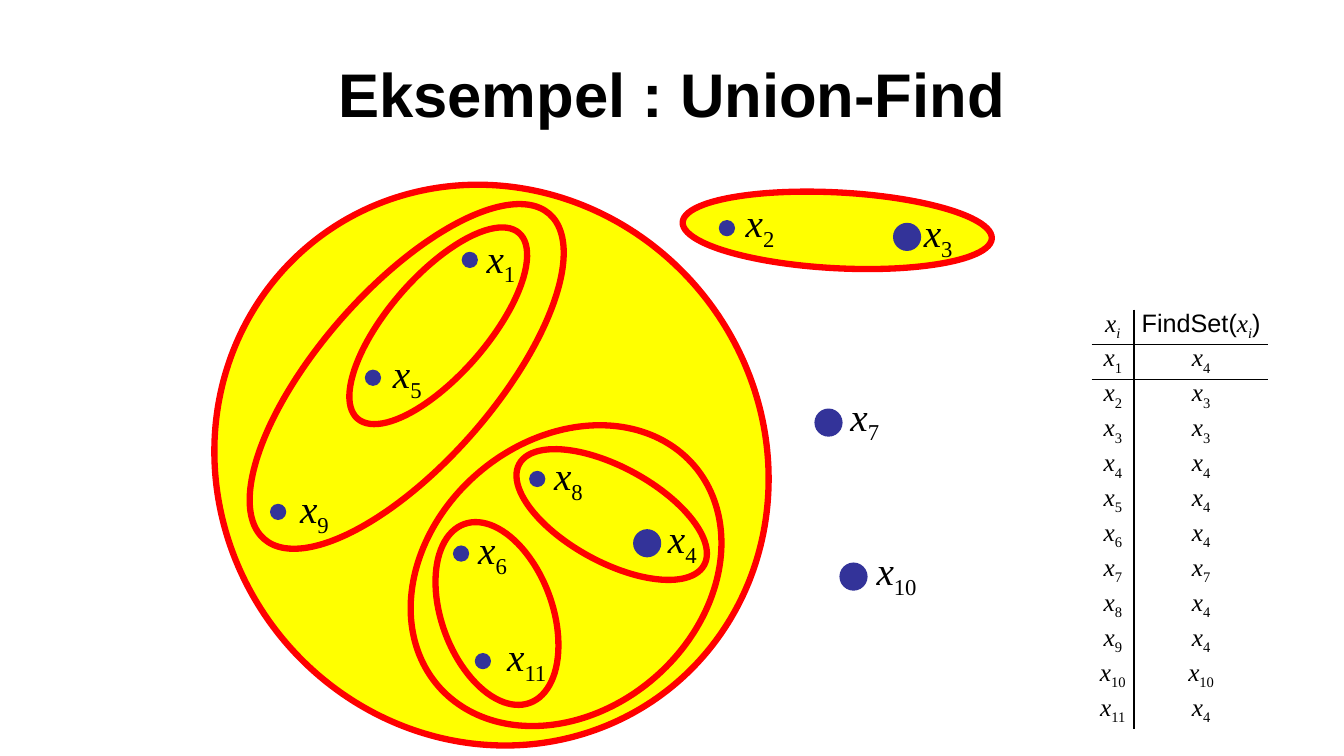
from lxml import etree
from pptx import Presentation
from pptx.dml.color import RGBColor as RGB
from pptx.enum.shapes import MSO_SHAPE as Shape
from pptx.enum.text import MSO_ANCHOR as Anchor, PP_ALIGN as Align
from pptx.oxml.ns import qn
from pptx.util import Cm, Pt


class Theme:
    text = RGB(0x00, 0x00, 0x00)
    set_fill = RGB(0xFF, 0xFF, 0x00)
    set_line = RGB(0xFF, 0x00, 0x00)
    dot = RGB(0x33, 0x33, 0x99)
    sans = "Arial"
    serif = "Times New Roman"
    title_size = Pt(44)
    label_size = Pt(28)
    table_size = Pt(18)
    set_width = Pt(4.5)
    border_width = Pt(1)


NO_TABLE_STYLE = "{2D5ABB26-0587-4C30-8999-92F81FD0307C}"

# left, top, width, height, rotation; outer sets come before inner ones
SETS = [
    (5.54, 4.52, 13.69, 14.4, 141.6),
    (4.8, 7.29, 10.9, 4.39, 311.3),
    (10.01, 11.1, 8.51, 6.81, 139.3),
    (9.8, 5.11, 2.49, 6.2, 41),
    (14.22, 10.31, 2.39, 5.31, 118.6),
    (11.13, 13.06, 2.79, 4.8, 339.8),
    (17.2, 4.85, 7.8, 1.91, 3),
]

# index: representative, dot centre x and y, label left and top
ELEMENTS = {
    1: (4, 11.84, 6.55, 11.89, 5.77),
    2: (3, 18.32, 5.75, 18.42, 4.88),
    3: (3, 22.86, 5.97, 22.91, 5.13),
    4: (4, 16.31, 13.69, 16.46, 12.83),
    5: (4, 9.4, 9.52, 9.53, 8.69),
    6: (4, 11.62, 13.95, 11.68, 13.11),
    7: (7, 20.88, 10.65, 21.06, 9.75),
    8: (4, 13.54, 12.07, 13.59, 11.25),
    9: (4, 7.01, 12.9, 7.19, 12.09),
    10: (10, 21.51, 14.53, 21.64, 13.64),
    11: (4, 12.17, 16.66, 12.32, 15.82),
}


def add_variable(p, index, size):
    """Append an italic x with a subscript index to paragraph p."""
    for text in ("x", index):
        r = p.add_run()
        r.text = text
        r.font.name = Theme.serif
        r.font.size = size
        r.font.color.rgb = Theme.text
        r.font.italic = not text.isdigit()
    r._r.get_or_add_rPr().set("baseline", "-25000")


def add_ellipse(left, top, width, height, color):
    sp = s.shapes.add_shape(Shape.OVAL, Cm(left), Cm(top), Cm(width), Cm(height))
    sp.shadow.inherit = False
    sp.fill.solid()
    sp.fill.fore_color.rgb = color
    sp.line.fill.background()
    return sp


prs = Presentation()
prs.slide_width, prs.slide_height = Cm(33.87), Cm(19.05)
s = prs.slides.add_slide(prs.slide_layouts[6])

# Title
tf = s.shapes.add_textbox(Cm(5.51), Cm(0.76), Cm(22.86), Cm(3.18)).text_frame
tf.word_wrap = True
tf.vertical_anchor = Anchor.MIDDLE
tf.text = "Eksempel : Union-Find"
p = tf.paragraphs[0]
p.alignment = Align.CENTER
font = p.runs[0].font
font.name, font.size, font.bold = Theme.sans, Theme.title_size, True
font.color.rgb = Theme.text

# Sets
for *box, rotation in SETS:
    sp = add_ellipse(*box, Theme.set_fill)
    sp.rotation = rotation
    sp.line.color.rgb = Theme.set_line
    sp.line.width = Theme.set_width

# Elements: a representative gets a larger dot
for i, (rep, x, y, left, top) in ELEMENTS.items():
    d = 0.71 if i == rep else 0.41
    add_ellipse(x - d / 2, y - d / 2, d, d, Theme.dot)
    width = 1.47 if i < 10 else 1.91
    tf = s.shapes.add_textbox(Cm(left), Cm(top), Cm(width), Cm(1.45)).text_frame
    tf.word_wrap = True
    p = tf.paragraphs[0]
    p.alignment = Align.CENTER
    add_variable(p, str(i), Theme.label_size)

# FindSet table
rows = [("i", "i")] + [(str(i), str(e[0])) for i, e in ELEMENTS.items()]
row_height = 0.88
table = s.shapes.add_table(len(rows), 2, Cm(27.51), Cm(7.8),
                           Cm(4.45), Cm(row_height * len(rows))).table
table.first_row = table.horz_banding = False
table._tbl.tblPr.find(qn("a:tableStyleId")).text = NO_TABLE_STYLE
table.columns[0].width, table.columns[1].width = Cm(1.07), Cm(3.38)

for n, row in enumerate(rows):
    table.rows[n].height = Cm(row_height)
    for col, index in enumerate(row):
        cell = table.cell(n, col)
        cell.margin_left = cell.margin_right = cell.margin_top = cell.margin_bottom = 0
        p = cell.text_frame.paragraphs[0]
        p.alignment = Align.CENTER
        is_function = n == 0 and col == 1
        if is_function:
            p.text = "FindSet("
        add_variable(p, index, Theme.table_size)
        if is_function:
            p.add_run().text = ")"
            for r in (p.runs[0], p.runs[-1]):
                r.font.name, r.font.size = Theme.sans, Theme.table_size
                r.font.color.rgb = Theme.text

        sides = ["a:lnR" if col == 0 else "a:lnL"]
        if n < 2:
            sides.append("a:lnB" if n == 0 else "a:lnT")
        tcPr = cell._tc.get_or_add_tcPr()
        for side in sides:
            ln = etree.SubElement(tcPr, qn(side), w=str(Theme.border_width))
            fill = etree.SubElement(ln, qn("a:solidFill"))
            etree.SubElement(fill, qn("a:srgbClr"), val=str(Theme.text))
        cell.fill.background()

prs.save("out.pptx")
